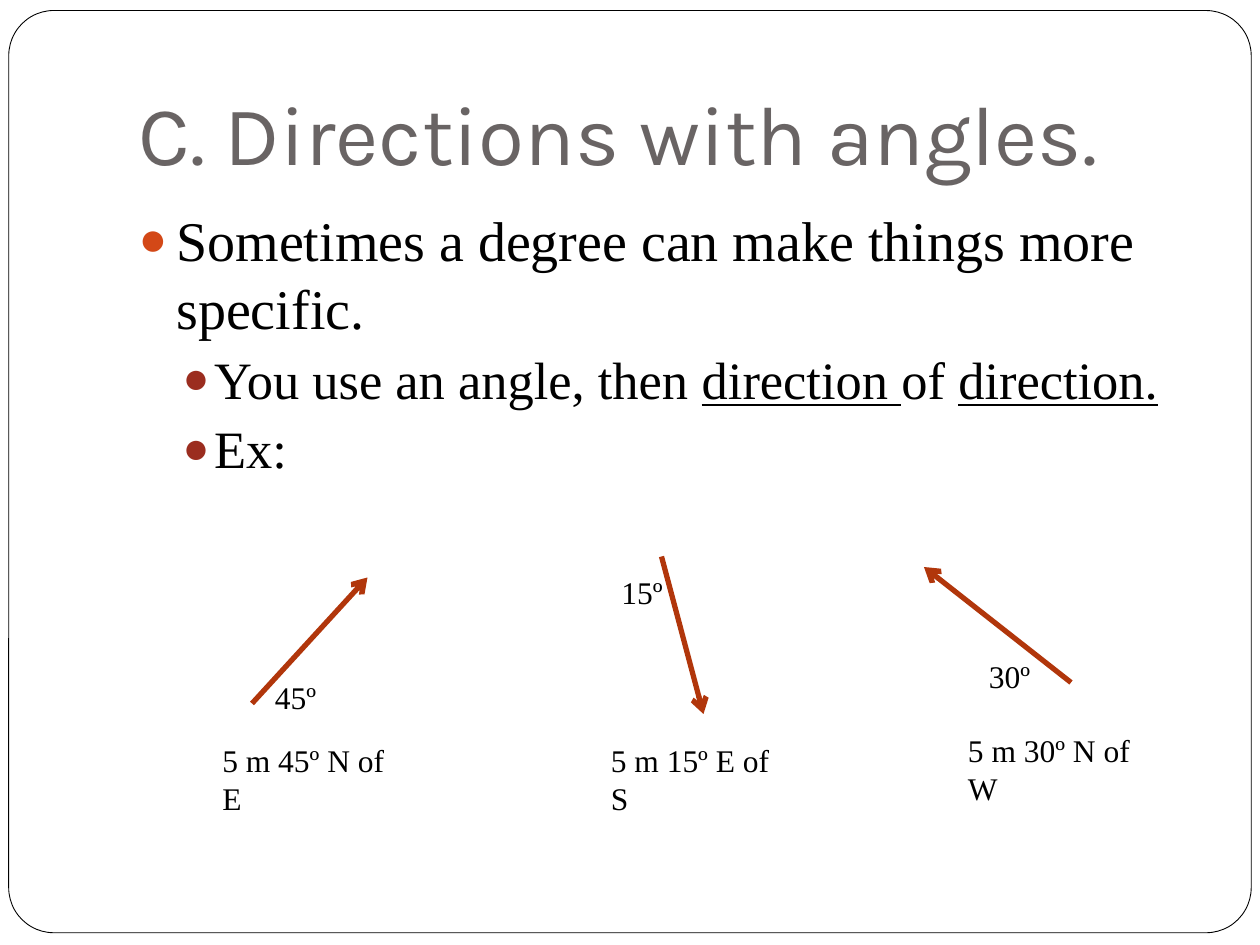
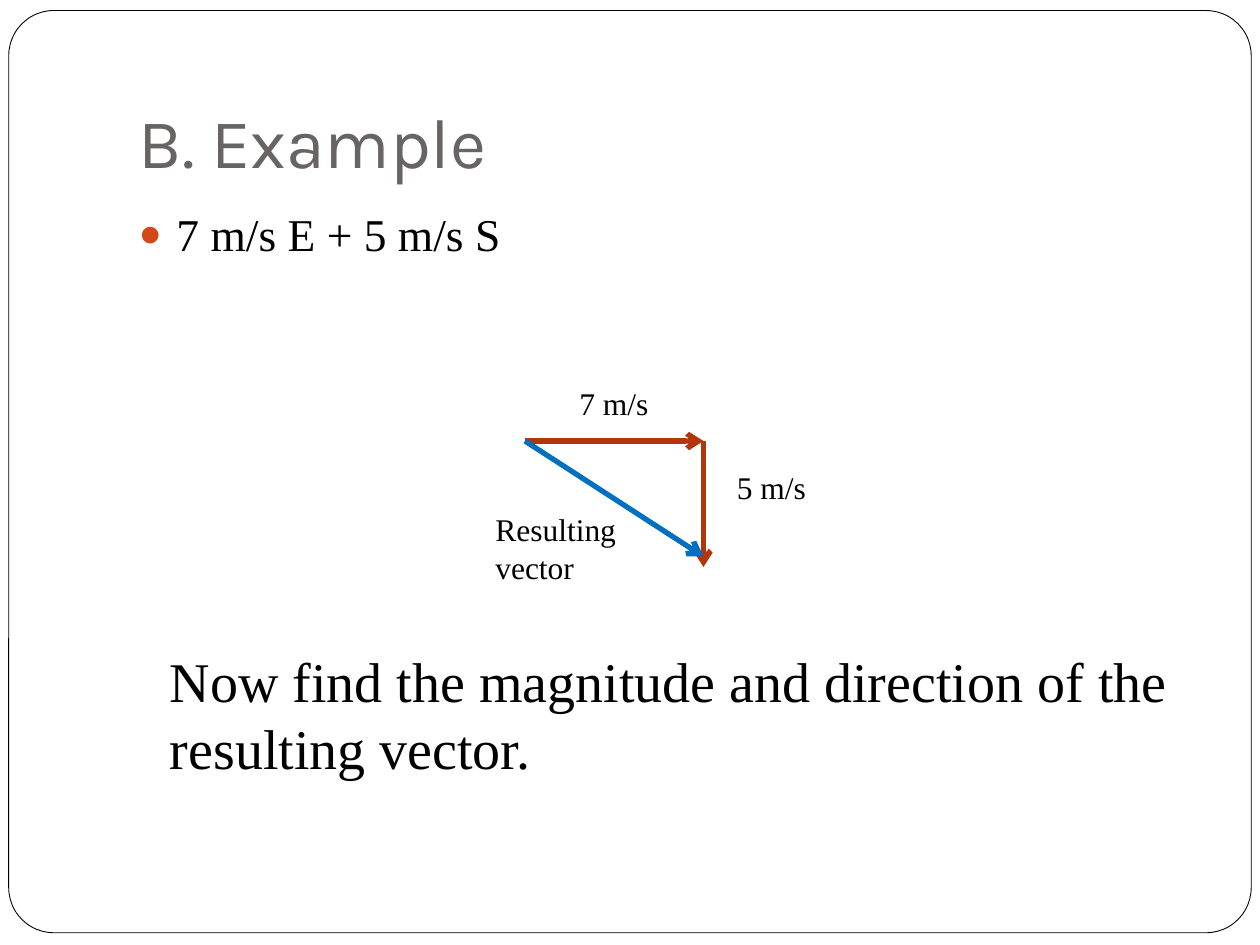
from lxml.etree import SubElement
from pptx import Presentation
from pptx.dml.color import RGBColor
from pptx.enum.shapes import MSO_CONNECTOR, MSO_SHAPE
from pptx.enum.text import MSO_ANCHOR, MSO_AUTO_SIZE, PP_ALIGN
from pptx.oxml.ns import qn
from pptx.util import Pt

COLORS = {
    "paper": "FFFFFF",
    "text": "000000",
    "title": "696464",
    "bullet": "D34817",
    "sub_bullet": "9B2D1F",
    "vector": "B1360B",
    "resultant": "0070C0",
}
TITLE_FONT = "Karla"
BODY_FONT = "Times New Roman"
FRAME_BOX = (5, 6, 710, 527)
TITLE_BOX = (72, 21.6, 612, 90)
BODY_BOX = (72, 114, 612, 360)
LEVELS = [
    {"margin": 21.6, "indent": -21.6, "before": 5.8, "color": "bullet"},
    {"margin": 43.2, "indent": -18, "before": 3.7, "color": "sub_bullet"},
]


def color(name):
    """Return the named palette colour."""
    return RGBColor.from_string(COLORS[name])


def place(shape, box):
    """Move and size a shape to a box in points."""
    shape.left, shape.top, shape.width, shape.height = map(Pt, box)


def format_run(run, size, font=BODY_FONT, color_name="text"):
    """Set the size, font and colour of a run."""
    run.font.size = Pt(size)
    run.font.name = font
    run.font.color.rgb = color(color_name)


def add_frame(slide, box):
    """Put the rounded page frame behind everything else."""
    frame = slide.shapes.add_shape(MSO_SHAPE.ROUNDED_RECTANGLE, *map(Pt, box))
    frame.adjustments[0] = 0.049
    frame.shadow.inherit = False
    frame.fill.solid()
    frame.fill.fore_color.rgb = color("paper")
    frame.line.color.rgb = color("text")
    frame.line.width = Pt(0.5)
    slide.shapes._spTree.insert(2, frame._element)


def fill_title(title, box, text, size):
    """Write the slide title at the bottom of its box."""
    place(title, box)
    frame = title.text_frame
    frame.text = text
    frame.auto_size = MSO_AUTO_SIZE.NONE
    frame.vertical_anchor = MSO_ANCHOR.BOTTOM
    frame.margin_bottom = Pt(7.2)
    paragraph = frame.paragraphs[0]
    paragraph.alignment = PP_ALIGN.LEFT
    format_run(paragraph.runs[0], size, TITLE_FONT, "title")


def format_bullet(paragraph, level):
    """Give a paragraph the indent, spacing and bullet of its level."""
    style = LEVELS[level]
    paragraph.level = level
    paragraph.space_before = Pt(style["before"])
    properties = paragraph._p.get_or_add_pPr()
    properties.set("marL", str(Pt(style["margin"])))
    properties.set("indent", str(Pt(style["indent"])))
    bullet_color = SubElement(properties, qn("a:buClr"))
    SubElement(bullet_color, qn("a:srgbClr"), val=COLORS[style["color"]])
    SubElement(properties, qn("a:buSzPct"), val="85000")
    SubElement(properties, qn("a:buChar"), char="●")


def fill_body(body, box, items):
    """Write bullets given as level, size and (text, underlined) pieces."""
    place(body, box)
    frame = body.text_frame
    frame.auto_size = MSO_AUTO_SIZE.NONE
    for index, (level, size, pieces) in enumerate(items):
        paragraph = frame.add_paragraph() if index else frame.paragraphs[0]
        format_bullet(paragraph, level)
        for text, underlined in pieces:
            run = paragraph.add_run()
            run.text = text
            format_run(run, size)
            run.font.underline = underlined


def add_label(slide, box, text, size=18):
    """Add a wrapped text box."""
    label = slide.shapes.add_textbox(*map(Pt, box))
    frame = label.text_frame
    frame.word_wrap = True
    frame.text = text
    format_run(frame.paragraphs[0].runs[0], size)


def add_arrow(slide, origin, start, end, color_name="vector"):
    """Draw a vector between two points measured from an origin."""
    left, top = origin
    arrow = slide.shapes.add_connector(
        MSO_CONNECTOR.STRAIGHT,
        Pt(left + start[0]), Pt(top + start[1]),
        Pt(left + end[0]), Pt(top + end[1]),
    )
    arrow.line.color.rgb = color(color_name)
    arrow.line.width = Pt(3)
    SubElement(arrow.line._get_or_add_ln(), qn("a:tailEnd"), type="arrow")
    SubElement(arrow._element.spPr, qn("a:effectLst"))


def add_angle_example(slide, box, start, end, angle_box, angle, caption):
    """Draw one angled vector with its angle and its caption."""
    left, top, width, height = box
    angle_left, angle_top, angle_width = angle_box
    add_arrow(slide, (left, top), start, end)
    add_label(slide, (left, top + height - 29, width, 29), caption)
    add_label(slide, (left + angle_left, top + angle_top, angle_width, 29), angle)


def add_vector_triangle(slide, box):
    """Draw the two vectors, their sum and the three labels."""
    left, top, width, height = box
    tail, corner, tip = (24, 36), (width, 36), (width, height)
    add_arrow(slide, (left, top), tail, corner)
    add_arrow(slide, (left, top), corner, tip)
    add_arrow(slide, (left, top), tail, (width, height - 6), "resultant")
    add_label(slide, (left + 48, top, 85, 29), "7 m/s")
    add_label(slide, (left + width + 12, top + 48, 85, 29), "5 m/s")
    add_label(slide, (left, top + 72, 108, 51), "Resulting vector")


def add_content_slide(presentation, title, title_size, items):
    """Add a framed slide with a title and bullets."""
    slide = presentation.slides.add_slide(presentation.slide_layouts[1])
    add_frame(slide, FRAME_BOX)
    fill_title(slide.shapes.title, TITLE_BOX, title, title_size)
    fill_body(slide.placeholders[1], BODY_BOX, items)
    return slide


def build_angles_slide(presentation):
    """Build the slide on directions with angles."""
    items = [
        (0, 32, [("Sometimes a degree can make things more specific.", False)]),
        (1, 30, [("You use an angle, then ", False), ("direction ", True),
                 ("of ", False), ("direction.", True)]),
        (1, 30, [("Ex:", False)]),
    ]
    slide = add_content_slide(presentation, "C. Directions with angles.", 48, items)
    examples = [
        ((120, 318, 114, 131), (24, 84), (90, 12), (30, 66, 55),
         "45º", "5 m 45º N of E"),
        ((342, 318, 114, 131), (36, 0), (60, 90), (6, 6, 48),
         "15º", "5 m 15º E of S"),
        ((546, 312, 126, 131), (66, 78), (-18, 12), (12, 60, 42),
         "30º", "5 m 30º N of W"),
    ]
    for example in examples:
        add_angle_example(slide, *example)


def build_sum_slide(presentation):
    """Build the slide that adds two vectors."""
    items = [(0, 26, [("7 m/s E + 5 m/s S", False)])]
    slide = add_content_slide(presentation, "B. Example", 40, items)
    add_vector_triangle(slide, (276, 216, 126, 108))
    add_label(
        slide, (90, 366, 606, 85),
        "Now find the magnitude and direction of the resulting vector.", 32,
    )


def main():
    """Build and save the presentation."""
    presentation = Presentation()
    presentation.slide_width, presentation.slide_height = Pt(720), Pt(540)
    build_angles_slide(presentation)
    build_sum_slide(presentation)
    presentation.save("out.pptx")


if __name__ == "__main__":
    main()
